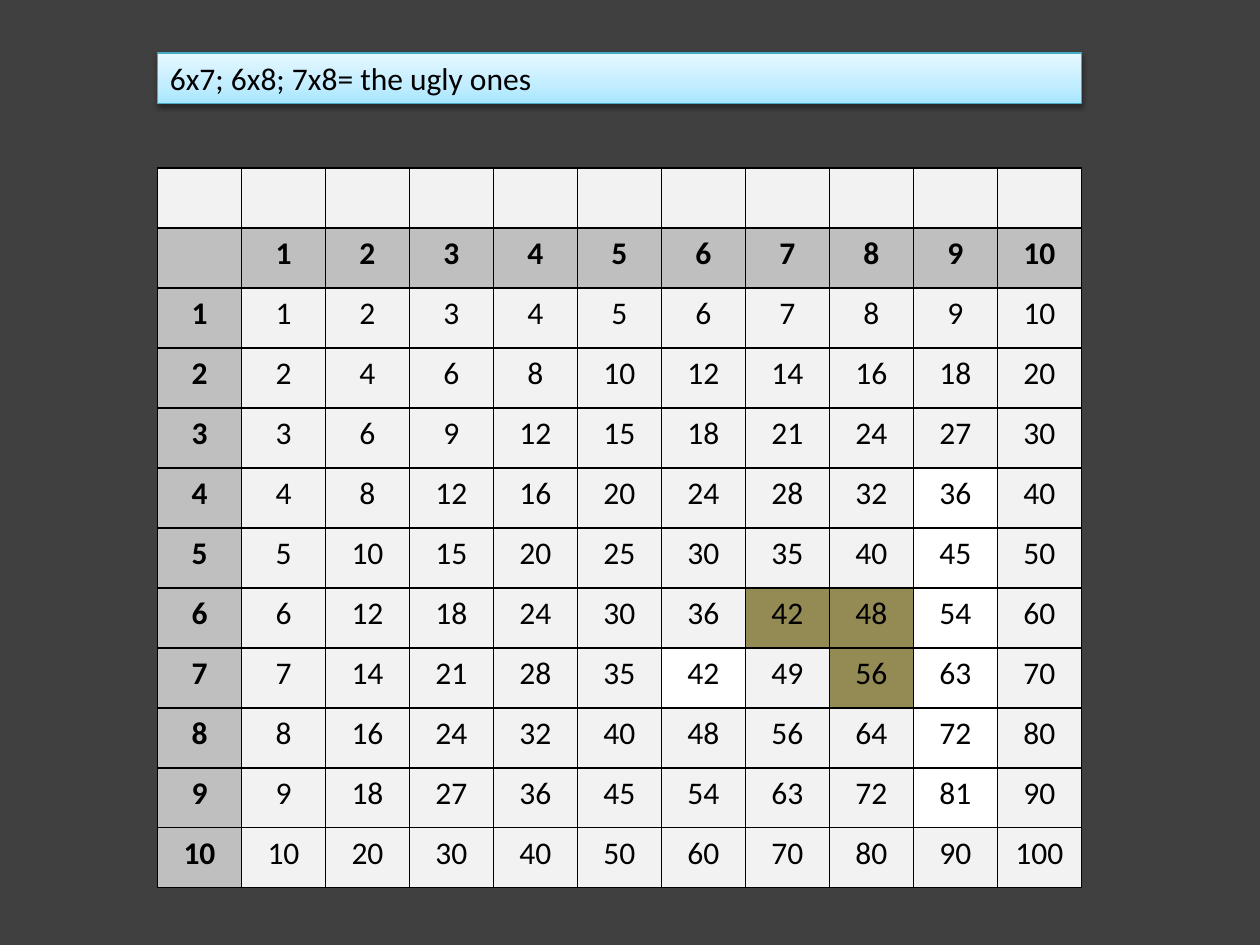
import pptx
import pptx.dml.color
import pptx.enum.shapes
import pptx.enum.text
import pptx.oxml.ns
import pptx.util
import lxml.etree

COLORS = {
    "background": "404040",
    "text": "000000",
    "border": "000000",
    "factor": "BFBFBF",
    "product": "F2F2F2",
    "plain": "FFFFFF",
    "ugly": "948A54",
    "banner_line": "46AAC5",
    "shadow": "000000",
}
BANNER_STOPS = {0: "A7E6FF", 35: "C1EDFF", 100: "E7F8FF"}
UGLY = {(6, 7), (6, 8), (7, 8)}
PLAIN = {(factor, 9) for factor in range(4, 10)} | {(7, 6)}
COLUMNS, ROWS = 11, 12


def rgb(name):
    return pptx.dml.color.RGBColor.from_string(COLORS[name])


def add_xml(parent, tag, **attributes):
    child = lxml.etree.SubElement(parent, pptx.oxml.ns.qn(tag))
    for key, value in attributes.items():
        child.set(key, str(value))
    return child


deck = pptx.Presentation()
deck.slide_width = pptx.util.Inches(10)
deck.slide_height = pptx.util.Inches(7.5)
slide = deck.slides.add_slide(deck.slide_layouts[6])
slide.background.fill.solid()
slide.background.fill.fore_color.rgb = rgb("background")

left = deck.slide_width // 8
column_width = deck.slide_width // 15
row_height = pptx.util.Inches(10 / 21)
width = column_width * COLUMNS

grid = slide.shapes.add_table(
    ROWS, COLUMNS, left, pptx.util.Inches(4 / 3), width, row_height * ROWS
).table
for column in grid.columns:
    column.width = column_width
for row in grid.rows:
    row.height = row_height

for row in range(ROWS):
    for column in range(COLUMNS):
        factor = row - 1
        is_factor = row > 0 and (factor == 0 or column == 0)
        if row == 0 or (factor == 0 and column == 0):
            label = ""
        elif is_factor:
            label = str(factor or column)
        else:
            label = str(factor * column)

        if is_factor:
            fill = "factor"
        elif (factor, column) in UGLY:
            fill = "ugly"
        elif (factor, column) in PLAIN:
            fill = "plain"
        else:
            fill = "product"

        cell = grid.cell(row, column)
        paragraph = cell.text_frame.paragraphs[0]
        paragraph.text = label
        paragraph.alignment = pptx.enum.text.PP_ALIGN.CENTER
        for run in paragraph.runs:
            run.font.name = "Calibri"
            run.font.size = pptx.util.Pt(18)
            run.font.bold = is_factor
            run.font.color.rgb = rgb("text")

        properties = cell._tc.get_or_add_tcPr()
        for side in ("a:lnL", "a:lnR", "a:lnT", "a:lnB"):
            border = add_xml(properties, side, w=pptx.util.Pt(1))
            add_xml(add_xml(border, "a:solidFill"), "a:srgbClr", val=COLORS["border"])
        cell.fill.solid()
        cell.fill.fore_color.rgb = rgb(fill)

banner = slide.shapes.add_shape(
    pptx.enum.shapes.MSO_SHAPE.RECTANGLE,
    left, pptx.util.Inches(0.42), width, pptx.util.Inches(0.4),
)
banner.fill.gradient()
gradient = banner._element.spPr.find(pptx.oxml.ns.qn("a:gradFill"))
stops = gradient.find(pptx.oxml.ns.qn("a:gsLst"))
for stop in list(stops):
    stops.remove(stop)
for position, color in BANNER_STOPS.items():
    add_xml(add_xml(stops, "a:gs", pos=position * 1000), "a:srgbClr", val=color)
gradient.find(pptx.oxml.ns.qn("a:lin")).set("ang", str(270 * 60000))
banner.line.color.rgb = rgb("banner_line")
banner.line.width = pptx.util.Pt(0.75)

banner.shadow.inherit = False
effects = banner._element.spPr.find(pptx.oxml.ns.qn("a:effectLst"))
shadow = add_xml(
    effects, "a:outerShdw", blurRad=pptx.util.Pt(3.1), dist=pptx.util.Pt(1.6),
    dir=90 * 60000, rotWithShape=0,
)
add_xml(add_xml(shadow, "a:srgbClr", val=COLORS["shadow"]), "a:alpha", val=38000)

banner.text_frame.word_wrap = True
banner.text_frame.auto_size = pptx.enum.text.MSO_AUTO_SIZE.SHAPE_TO_FIT_TEXT
banner.text_frame.vertical_anchor = pptx.enum.text.MSO_ANCHOR.TOP
message = banner.text_frame.paragraphs[0]
message.text = "6x7; 6x8; 7x8= the ugly ones"
message.alignment = pptx.enum.text.PP_ALIGN.LEFT
message.runs[0].font.name = "Calibri"
message.runs[0].font.size = pptx.util.Pt(18)
message.runs[0].font.color.rgb = rgb("text")

deck.save("out.pptx")
